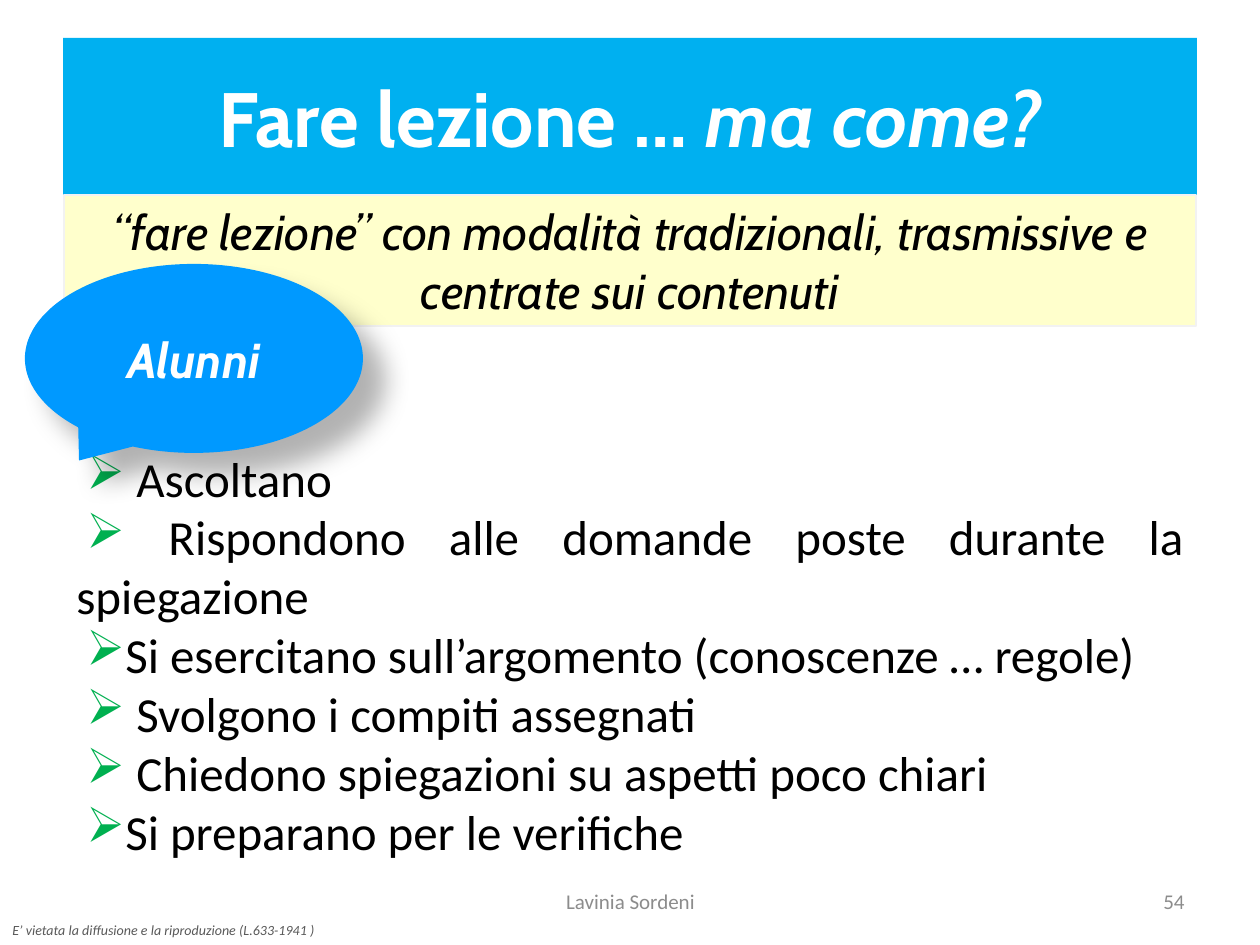
from dataclasses import dataclass

from lxml import etree
from pptx import Presentation
from pptx import util as u
from pptx.dml.color import RGBColor
from pptx.enum import shapes, text
from pptx.oxml.ns import qn

# Content
TITLE = [("Fare lezione … ", False), ("ma come?", True)]
SUBTITLE = "“fare lezione” con modalità tradizionali, trasmissive e centrate sui contenuti"
CALLOUT = "Alunni"
ACTIVITIES = [
    " Ascoltano",
    " Rispondono alle domande poste durante la spiegazione",
    "Si esercitano sull’argomento (conoscenze … regole)",
    " Svolgono i compiti assegnati",
    " Chiedono spiegazioni su aspetti poco chiari",
    "Si preparano per le verifiche",
]
NOTICE = "E’ vietata la diffusione e la riproduzione (L.633-1941 )"
AUTHOR, PAGE_NUMBER = "Lavinia Sordeni", "54"


@dataclass(frozen=True)
class Theme:
    display: str = "Cabin"
    body: str = "Calibri"
    symbols: str = "OpenSymbol"
    white: str = "FFFFFF"
    black: str = "000000"
    banner: str = "00B0F0"
    cream: str = "FFFFCC"
    cream_edge: str = "F2F2F2"
    bubble: str = "0099FF"
    bullet: str = "00B050"
    footer: str = "8C8C8C"
    notice: str = "595959"
    title_size: int = 44
    text_size: int = 28
    footer_size: int = 12
    notice_size: int = 8


THEME = Theme()
EMU_PER_PX = 914400 / 126
ALIGN, ANCHOR = text.PP_ALIGN, text.MSO_ANCHOR


def px(length):
    return u.Emu(round(length * EMU_PER_PX))


def color(value):
    return RGBColor.from_string(value)


def place(shape, left, top, width, height):
    shape.left, shape.top = px(left), px(top)
    shape.width, shape.height = px(width), px(height)


def write(shape, paragraphs, font=THEME.body, size=THEME.text_size, ink=THEME.black,
          bold=False, italic=False, align=ALIGN.LEFT, anchor=ANCHOR.TOP, bullet=None):
    """Each paragraph is a string or a list of (text, italic) pairs."""
    frame = shape.text_frame
    frame.word_wrap = True
    frame.vertical_anchor = anchor
    for index, content in enumerate(paragraphs):
        para = frame.add_paragraph() if index else frame.paragraphs[0]
        para.alignment = align
        spans = [(content, italic)] if isinstance(content, str) else content
        for words, slanted in spans:
            span = para.add_run()
            span.text = words
            span.font.name, span.font.size = font, u.Pt(size)
            span.font.bold, span.font.italic = bold, slanted
            span.font.color.rgb = color(ink)
        if bullet:
            add_bullet(para, bullet)


def add_bullet(para, mark):
    props = para._p.get_or_add_pPr()
    props.set("marL", "0")
    props.set("indent", str(px(10)))
    tint = etree.SubElement(props, qn("a:buClr"))
    etree.SubElement(tint, qn("a:srgbClr"), val=THEME.bullet)
    etree.SubElement(props, qn("a:buFont"), typeface=THEME.symbols)
    etree.SubElement(props, qn("a:buChar"), char=mark)


def add_shadow(shape, blur, distance, angle, opacity):
    effects = shape._element.spPr.find(qn("a:effectLst"))
    shadow = etree.SubElement(
        effects, qn("a:outerShdw"), blurRad=str(u.Pt(blur)), dist=str(u.Pt(distance)),
        dir=str(angle * 60000), algn="tl", rotWithShape="0")
    tint = etree.SubElement(shadow, qn("a:srgbClr"), val=THEME.black)
    etree.SubElement(tint, qn("a:alpha"), val=str(opacity * 1000))


def add_box(page, kind, area, fill, edge=None):
    box = page.shapes.add_shape(kind, *map(px, area))
    box.shadow.inherit = False
    box.fill.solid()
    box.fill.fore_color.rgb = color(fill)
    if edge:
        box.line.color.rgb = color(edge)
        box.line.width = u.Pt(0.75)
    else:
        box.line.fill.background()
    return box


def add_text(page, area, paragraphs, **style):
    write(page.shapes.add_textbox(*map(px, area)), paragraphs, **style)


def main():
    deck = Presentation()
    deck.slide_width, deck.slide_height = px(1260), px(945)
    page = deck.slides.add_slide(deck.slide_layouts[5])
    centred = dict(align=ALIGN.CENTER, anchor=ANCHOR.MIDDLE)

    # Title banner
    title = page.shapes.title
    place(title, 63, 38, 1134, 157)
    title.fill.solid()
    title.fill.fore_color.rgb = color(THEME.banner)
    write(title, [TITLE], font=THEME.display, size=THEME.title_size,
          ink=THEME.white, bold=True, **centred)

    # Subtitle band
    band = add_box(page, shapes.MSO_SHAPE.RECTANGLE, (64, 195, 1132, 131),
                   THEME.cream, THEME.cream_edge)
    write(band, [SUBTITLE], font=THEME.display, italic=True, align=ALIGN.CENTER)

    # Activity list
    add_text(page, (64, 442, 1132, 428), ACTIVITIES, align=ALIGN.JUSTIFY, bullet="➢")

    # Speech bubble
    bubble = add_box(page, shapes.MSO_SHAPE.OVAL_CALLOUT, (25, 264, 338, 189), THEME.bubble)
    bubble.adjustments[0], bubble.adjustments[1] = -0.34, 0.54
    add_shadow(bubble, blur=15, distance=18, angle=45, opacity=30)
    write(bubble, [CALLOUT], font=THEME.display, ink=THEME.white,
          bold=True, italic=True, **centred)

    # Footer
    footer = dict(size=THEME.footer_size, ink=THEME.footer, anchor=ANCHOR.MIDDLE)
    add_text(page, (431, 876, 399, 50), [AUTHOR], align=ALIGN.CENTER, **footer)
    add_text(page, (903, 876, 294, 50), [PAGE_NUMBER], align=ALIGN.RIGHT, **footer)
    add_text(page, (0, 915, 333, 30), [NOTICE], size=THEME.notice_size,
             ink=THEME.notice, italic=True)

    deck.save("out.pptx")


if __name__ == "__main__":
    main()
